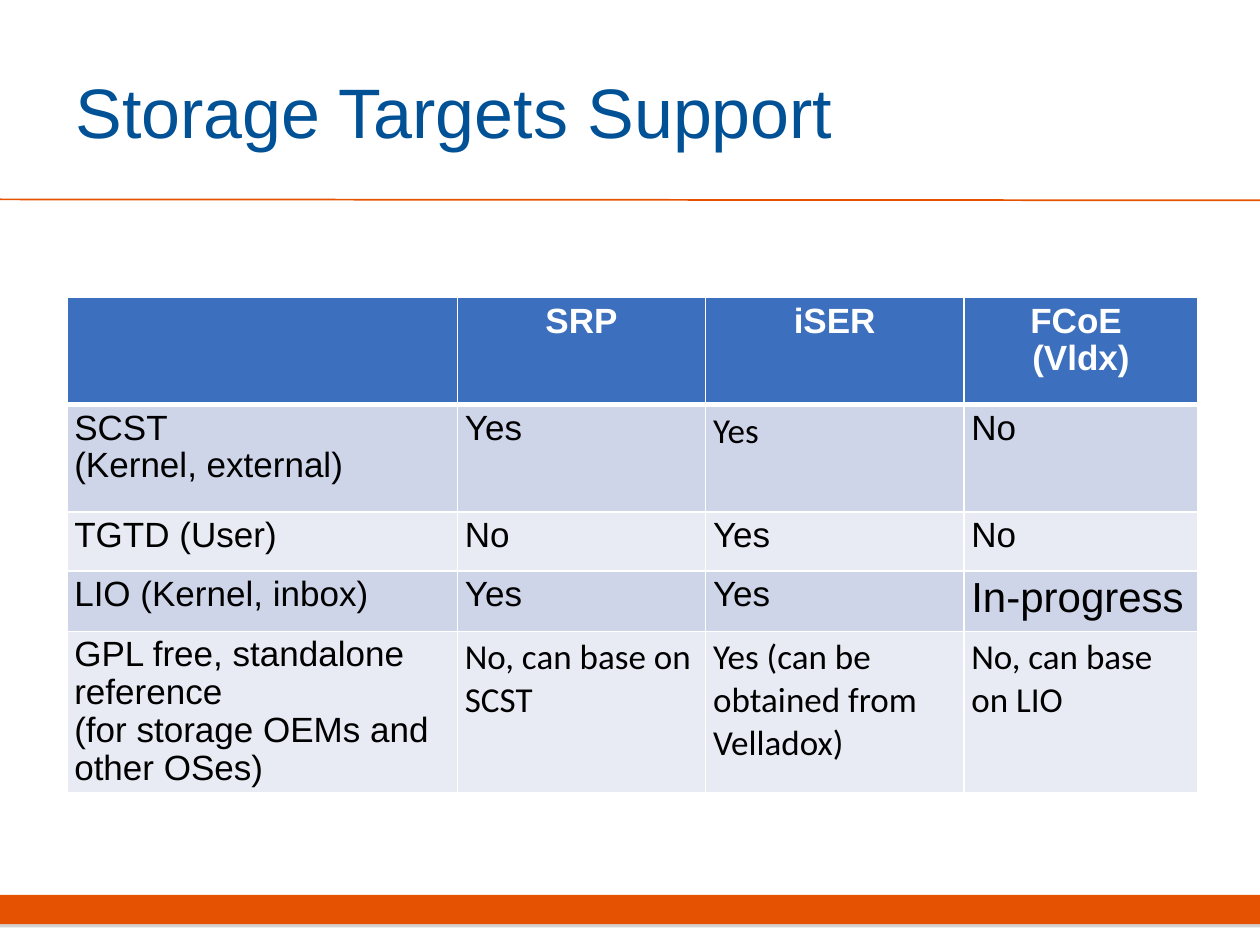
"""Build the storage targets support slide."""
from dataclasses import dataclass

from lxml.etree import SubElement
from pptx import Presentation
from pptx.dml.color import RGBColor as RGB
from pptx.enum.shapes import MSO_CONNECTOR as Conn, MSO_SHAPE as Shape
from pptx.enum.text import MSO_ANCHOR as Anchor, PP_ALIGN as Align
from pptx.oxml.ns import qn
from pptx.util import Emu, Inches, Pt


@dataclass(frozen=True)
class Theme:
    title: str = "005195"
    accent: str = "E55302"
    header: str = "3C6FBD"
    bands: tuple = ("CED5E8", "E8EBF4")
    white: str = "FFFFFF"
    black: str = "000000"
    shadow: str = "808080"
    font: str = "Arial"
    alt_font: str = "Calibri"
    title_size: int = 40
    body_size: int = 20
    large_size: int = 24


@dataclass(frozen=True)
class Entry:
    text: str
    font: str = Theme.font
    size: int = Theme.body_size


T = Theme()
WIDTH, HEIGHT = Inches(10), Inches(7.5)
COLUMNS = (3.1, 1.97, 2.05, 1.86)
ROWS = (0.85, 0.85, 0.47, 0.48, 1.28)
ENTRIES = (
    (Entry(""), Entry("SRP"), Entry("iSER"), Entry("FCoE \n(Vldx)")),
    (Entry("SCST \v(Kernel, external)"), Entry("Yes"),
     Entry("Yes", T.alt_font), Entry("No")),
    (Entry("TGTD (User)"), Entry("No"), Entry("Yes"), Entry("No")),
    (Entry("LIO (Kernel, inbox)"), Entry("Yes"), Entry("Yes"),
     Entry("In-progress", size=T.large_size)),
    (Entry("GPL free, standalone reference\n(for storage OEMs and other OSes)"),
     Entry("No, can base on SCST", T.alt_font),
     Entry("Yes (can be obtained from Velladox)", T.alt_font),
     Entry("No, can base on LIO", T.alt_font)),
)


def across(share: float) -> Emu:
    return Emu(round(WIDTH * share))


def down(share: float) -> Emu:
    return Emu(round(HEIGHT * share))


def write(tf, text: str, *, color: str, font: str = T.font, size: int = T.body_size,
          bold: bool = False, align=Align.LEFT, spacing: float = 1.0) -> None:
    tf.text = text
    tf.word_wrap = True
    for p in tf.paragraphs:
        p.alignment, p.line_spacing = align, spacing
        for r in p.runs:
            r.font.name, r.font.size, r.font.bold = font, Pt(size), bold
            r.font.color.rgb = RGB.from_string(color)


def add_color(parent, color: str):
    return SubElement(parent, qn("a:srgbClr"), val=color)


def add_title(s, text: str) -> None:
    sp = s.shapes.title
    sp.left, sp.top = across(0.05), down(1 / 30)
    sp.width, sp.height = across(0.817), down(1 / 6)
    sp.text_frame.vertical_anchor = Anchor.MIDDLE
    write(sp.text_frame, text, color=T.title, size=T.title_size)


def add_rule(s) -> None:
    line = s.shapes.add_connector(Conn.STRAIGHT, 0, down(0.211), WIDTH, down(0.212))
    line.line.color.rgb = RGB.from_string(T.accent)
    line.line.width = Pt(1)
    SubElement(line._element.spPr, qn("a:effectLst"))


def add_footer_bar(s) -> None:
    sp = s.shapes.add_shape(Shape.RECTANGLE, 0, down(0.947), WIDTH, down(0.031))
    sp.fill.solid()
    sp.fill.fore_color.rgb = RGB.from_string(T.accent)
    sp.line.fill.background()
    sp.shadow.inherit = False
    effects = sp._element.spPr.find(qn("a:effectLst"))
    shadow = SubElement(effects, qn("a:outerShdw"), dist=str(Pt(1.8)),
                        dir="5400000", rotWithShape="0")
    SubElement(add_color(shadow, T.shadow), qn("a:alpha"), val="35000")


def add_borders(cell, bottom: float) -> None:
    tc_pr = cell._tc.get_or_add_tcPr()
    for side, width in zip("LRTB", (1, 1, 1, bottom)):
        ln = SubElement(tc_pr, qn(f"a:ln{side}"), w=str(Pt(width)))
        add_color(SubElement(ln, qn("a:solidFill")), T.white)


def fill_cell(cell, entry: Entry, row: int) -> None:
    header = row == 0
    cell.margin_left = cell.margin_right = Inches(0.06)
    cell.margin_top = cell.margin_bottom = Inches(0.04)
    add_borders(cell, 3 if header else 1)
    cell.fill.solid()
    fill = T.header if header else T.bands[(row - 1) % 2]
    cell.fill.fore_color.rgb = RGB.from_string(fill)
    write(cell.text_frame, entry.text, font=entry.font, size=entry.size, bold=header,
          color=T.white if header else T.black,
          align=Align.CENTER if header else Align.LEFT,
          spacing=0.97 if entry.font == T.font else 1.0)


def add_support_table(s) -> None:
    frame = s.shapes.add_table(len(ROWS), len(COLUMNS), across(0.053), down(0.315),
                               Inches(sum(COLUMNS)), Inches(sum(ROWS)))
    table = frame.table
    for column, width in zip(table.columns, COLUMNS):
        column.width = Inches(width)
    for i, (row, height) in enumerate(zip(table.rows, ROWS)):
        row.height = Inches(height)
        for cell, entry in zip(row.cells, ENTRIES[i]):
            fill_cell(cell, entry, i)


def main() -> None:
    prs = Presentation()
    prs.slide_width, prs.slide_height = WIDTH, HEIGHT
    s = prs.slides.add_slide(prs.slide_layouts[5])
    add_footer_bar(s)
    add_rule(s)
    add_title(s, "Storage Targets Support")
    add_support_table(s)
    prs.save("out.pptx")


if __name__ == "__main__":
    main()
